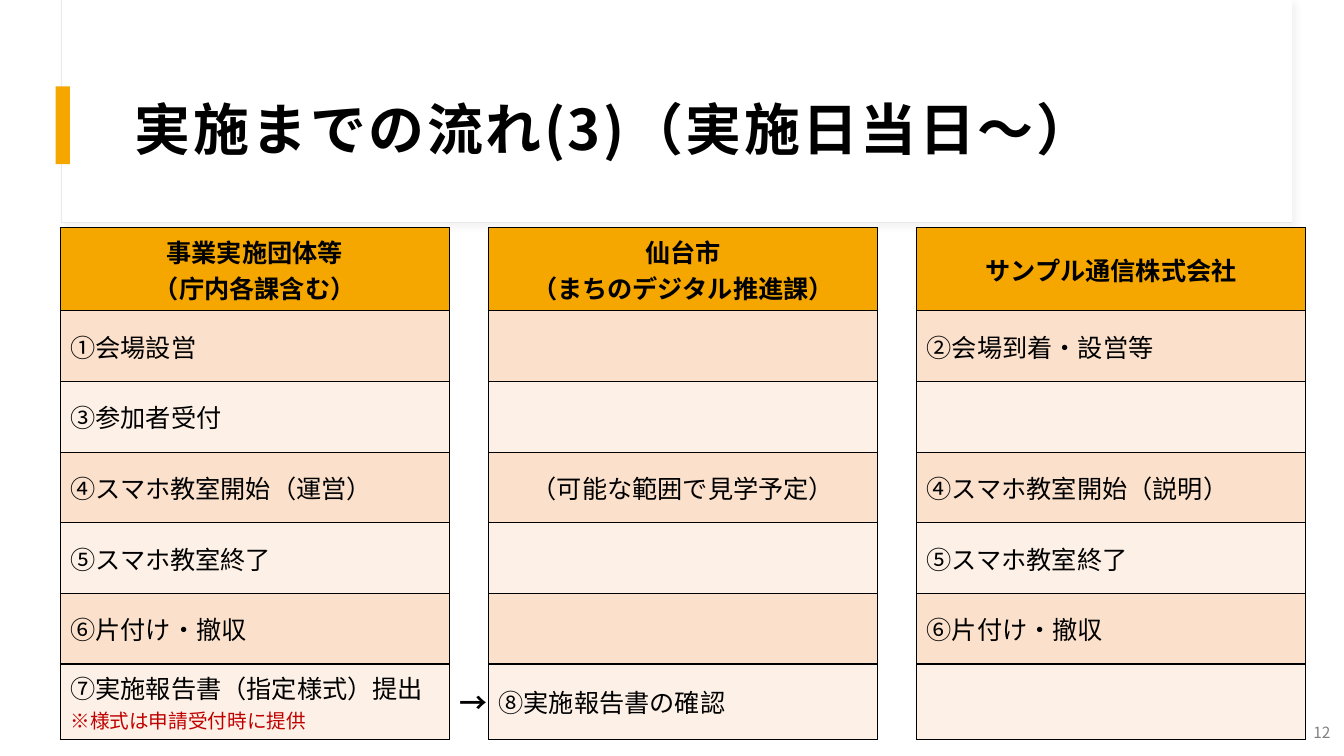
"""Build the slide on the day-of-event flow, shared between three parties."""
from lxml import etree
from pptx import Presentation
from pptx import util as u
from pptx.dml.color import RGBColor
from pptx.enum import shapes, text
from pptx.oxml import parse_xml
from pptx.oxml.ns import qn

FONT = "Noto Sans CJK JP"
NS = "http://schemas.openxmlformats.org/drawingml/2006/main"
C = {"white": "FFFFFF", "edge": "E9E9E9", "shadow": "D9D9D9", "orange": "F5A700",
     "peach": "FBE1CC", "cream": "FDF1E7", "black": "000000", "red": "C00000", "grey": "808080"}

TITLE = "実施までの流れ(3)（実施日当日～）"
PAGE = "12"
HEADERS = [["事業実施団体等", "（庁内各課含む）"], ["仙台市", "（まちのデジタル推進課）"],
           ["サンプル通信株式会社"]]
STEPS = [
    [["①会場設営"], [], ["②会場到着・設営等"]],
    [["③参加者受付"], [], []],
    [["④スマホ教室開始（運営）"], ["（可能な範囲で見学予定）"], ["④スマホ教室開始（説明）"]],
    [["⑤スマホ教室終了"], [], ["⑤スマホ教室終了"]],
    [["⑥片付け・撤収"], [], ["⑥片付け・撤収"]],
    [["⑦実施報告書（指定様式）提出", "※様式は申請受付時に提供"], ["⑧実施報告書の確認"], []],
]
ARROW = "→"
COL_W, GAP_W, HEAD_H, ROW_H = 9.8, 0.99, 1.2, 1.78

HEAD = {"size": 18, "bold": True, "color": "black"}
BODY = {"size": 18, "bold": False, "color": "black"}
NOTE = {"size": 14, "bold": False, "color": "red"}
ARROW_FMT = {"size": 20, "bold": True, "color": "black"}


def rgb(name):
    return RGBColor.from_string(C[name])


def write(p, words, fmt, align):
    p.alignment = align
    r = p.add_run()
    r.text = words
    r.font.color.rgb = rgb(fmt["color"])
    for key, val in {"name": FONT, "size": u.Pt(fmt["size"]), "bold": fmt["bold"]}.items():
        setattr(r.font, key, val)
    rPr = r.font._element
    etree.SubElement(rPr, qn("a:ea")).set("typeface", FONT)
    return rPr


def write_lines(tf, lines, fmts, align):
    for i, (words, fmt) in enumerate(zip(lines, fmts)):
        write(tf.add_paragraph() if i else tf.paragraphs[0], words, fmt, align)


def frame(tf, **margins):
    tf.word_wrap = True
    tf.vertical_anchor = text.MSO_ANCHOR.MIDDLE
    for side, val in margins.items():
        setattr(tf, f"margin_{side}", u.Cm(val))


def add_rect(s, box, fill, line=None):
    sp = s.shapes.add_shape(shapes.MSO_SHAPE.RECTANGLE, *map(u.Cm, box))
    sp.shadow.inherit = False
    sp.fill.solid()
    sp.fill.fore_color.rgb = rgb(fill)
    if line:
        sp.line.color.rgb = rgb(line)
        sp.line.width = u.Pt(0.75)
    else:
        sp.line.fill.background()
    return sp


def add_shadow(sp):
    sp._element.spPr.find(qn("a:effectLst")).append(parse_xml(
        f'<a:outerShdw xmlns:a="{NS}" blurRad="{u.Pt(4)}" dist="{u.Pt(3)}" dir="2700000">'
        f'<a:srgbClr val="{C["shadow"]}"><a:alpha val="30000"/></a:srgbClr></a:outerShdw>'))


def set_borders(cell, sides):
    tcPr = cell._tc.get_or_add_tcPr()
    for i, side in enumerate("LRTB"):
        paint = f'<a:solidFill><a:srgbClr val="{C["black"]}"/></a:solidFill>'
        if side not in sides:
            paint = "<a:noFill/>"
        tcPr.insert(i, parse_xml(f'<a:ln{side} xmlns:a="{NS}" w="{u.Pt(1)}">{paint}</a:ln{side}>'))


def add_flow_table(s):
    rows, cols = len(STEPS) + 1, 2 * len(HEADERS) - 1
    widths = [GAP_W if c % 2 else COL_W for c in range(cols)]
    heights = [HEAD_H] + [ROW_H] * len(STEPS)
    tbl = s.shapes.add_table(rows, cols, u.Cm(1.52), u.Cm(5.74),
                             u.Cm(sum(widths)), u.Cm(sum(heights))).table
    tbl.first_row = tbl.horz_banding = False
    for col, w in zip(tbl.columns, widths):
        col.width = u.Cm(w)
    for row, h in zip(tbl.rows, heights):
        row.height = u.Cm(h)
    for r, parties in enumerate([HEADERS] + STEPS):
        for c in range(cols):
            cell = tbl.cell(r, c)
            cell.vertical_anchor = text.MSO_ANCHOR.MIDDLE
            if c % 2:
                cell.fill.background()
                set_borders(cell, "LR")
                continue
            cell.fill.solid()
            cell.fill.fore_color.rgb = rgb("orange" if r == 0 else "peach" if r % 2 else "cream")
            set_borders(cell, "LRTB")
            lines = parties[c // 2]
            centred = r == 0 or (lines and lines[0].startswith("（"))
            align = text.PP_ALIGN.CENTER if centred else text.PP_ALIGN.LEFT
            write_lines(cell.text_frame, lines, [HEAD, HEAD] if r == 0 else [BODY, NOTE], align)
    write(tbl.cell(rows - 1, 1).text_frame.paragraphs[0], ARROW, ARROW_FMT, text.PP_ALIGN.CENTER)


def add_title(s):
    title = s.shapes.title
    title._element.getparent().append(title._element)
    for key, val in {"left": 3.1, "top": 1.52, "width": 28.24, "height": 3.28}.items():
        setattr(title, key, u.Cm(val))
    tf = title.text_frame
    frame(tf, left=0.3, top=0.3, right=0.3, bottom=0.25)
    tf.auto_size = text.MSO_AUTO_SIZE.NONE
    p = tf.paragraphs[0]
    p.line_spacing = 1.05
    fmt = {"size": 40, "bold": True, "color": "black"}
    write(p, TITLE, fmt, text.PP_ALIGN.LEFT).set("spc", "180")


def add_page_number(s):
    tf = s.shapes.add_textbox(*map(u.Cm, (30.23, 18.11, 3.3, 0.71))).text_frame
    frame(tf, left=0, top=0, right=0, bottom=0)
    fmt = {"size": 11, "bold": False, "color": "grey"}
    write(tf.paragraphs[0], PAGE, fmt, text.PP_ALIGN.RIGHT)


def main():
    prs = Presentation()
    prs.slide_width, prs.slide_height = u.Cm(33.87), u.Cm(19.05)
    s = prs.slides.add_slide(prs.slide_layouts[5])
    add_shadow(add_rect(s, (1.55, 0, 31.01, 5.61), "white", "edge"))
    add_rect(s, (1.57, 0, 30.99, 5.59), "white")
    add_rect(s, (1.4, 2.18, 0.36, 1.96), "orange")
    add_title(s)
    add_flow_table(s)
    add_page_number(s)
    prs.save("out.pptx")


if __name__ == "__main__":
    main()
